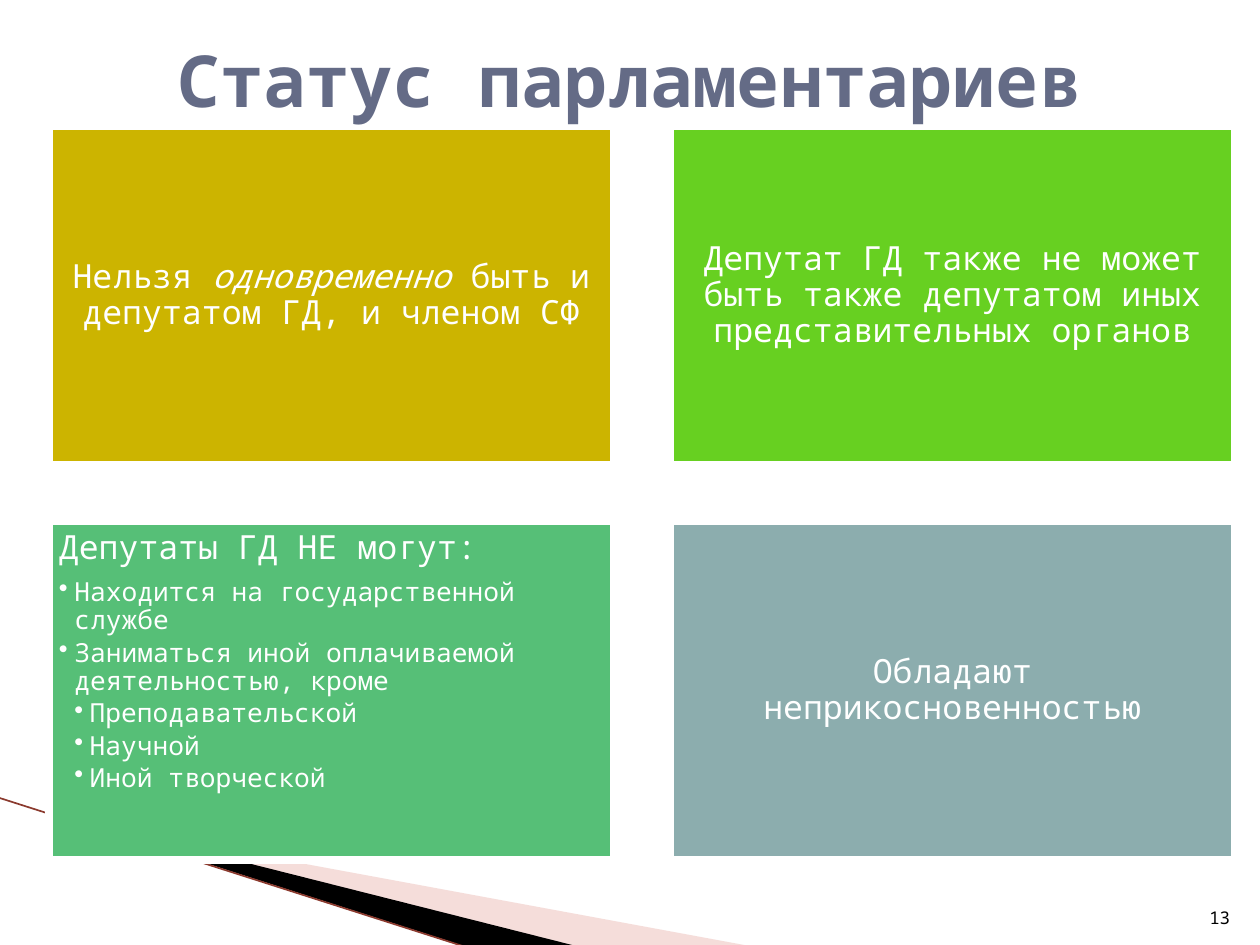
import pptx
import pptx.dml.color
import pptx.enum.shapes
import pptx.enum.text
import pptx.oxml.ns
import pptx.util
from lxml import etree
from pptx.util import Cm

COLORS = {
    "white": "FFFFFF", "black": "000000", "title": "646B86",
    "pink": "E7ACA4", "stripe": "8B3A2E", "gold": "CCB400",
    "lime": "67D021", "green": "56BF77", "gray": "8CADAE",
}
ALIGN = pptx.enum.text.PP_ALIGN
ANCHOR = pptx.enum.text.MSO_ANCHOR


def add_xml(parent, tag, **attributes):
    return etree.SubElement(parent, pptx.oxml.ns.qn(tag), **attributes)


class SlideBuilder:
    font_name = "Noto Sans Mono"
    heading_size = 19
    bullet_size = 15
    line_spacing = 0.9
    card_inset = Cm(0.2)
    bullet_indent = Cm(0.31)

    def __init__(self, slide):
        self.slide = slide

    def rgb(self, name):
        return pptx.dml.color.RGBColor.from_string(COLORS[name])

    def style_font(self, paragraph, size, color="white", bold=False):
        paragraph.font.name = self.font_name
        paragraph.font.size = pptx.util.Pt(size)
        paragraph.font.bold = bold
        paragraph.font.color.rgb = self.rgb(color)

    def polygon(self, points, color, opacity=None):
        """Fill the outline through points (in cm); opacity is in percent."""
        corners = [(Cm(x), Cm(y)) for x, y in points]
        builder = self.slide.shapes.build_freeform(*corners[0], scale=1.0)
        builder.add_line_segments(corners[1:], close=True)
        shape = builder.convert_to_shape()
        shape.shadow.inherit = False
        shape.line.fill.background()
        shape.fill.solid()
        shape.fill.fore_color.rgb = self.rgb(color)
        if opacity is not None:
            tint = shape.fill._xPr.find(".//" + pptx.oxml.ns.qn("a:srgbClr"))
            add_xml(tint, "a:alpha", val=str(opacity * 1000))

    def line(self, start, end, color, width):
        connector = self.slide.shapes.add_connector(
            pptx.enum.shapes.MSO_CONNECTOR.STRAIGHT,
            *(Cm(value) for value in start + end))
        connector.line.color.rgb = self.rgb(color)
        connector.line.width = pptx.util.Pt(width)
        add_xml(connector._element.spPr, "a:effectLst")

    def label(self, box, text, size, color, align, anchor, bold=False):
        frame = self.slide.shapes.add_textbox(*map(Cm, box)).text_frame
        frame.word_wrap = True
        frame.vertical_anchor = anchor
        paragraph = frame.paragraphs[0]
        paragraph.text = text
        paragraph.alignment = align
        self.style_font(paragraph, size, color, bold)

    def card(self, box, color, heading, bullets=()):
        """heading lists (text, italic) runs; bullets lists (level, text)."""
        shape = self.slide.shapes.add_shape(
            pptx.enum.shapes.MSO_SHAPE.RECTANGLE, *map(Cm, box))
        shape.shadow.inherit = False
        shape.fill.solid()
        shape.fill.fore_color.rgb = self.rgb(color)
        shape.line.color.rgb = self.rgb("white")
        shape.line.width = pptx.util.Pt(4.33)
        frame = shape.text_frame
        frame.word_wrap = True
        frame.margin_left = frame.margin_right = self.card_inset
        frame.margin_top = frame.margin_bottom = self.card_inset
        frame.vertical_anchor = ANCHOR.TOP if bullets else ANCHOR.MIDDLE

        paragraph = frame.paragraphs[0]
        for text, italic in heading:
            run = paragraph.add_run()
            run.text = text
            if italic:
                run.font.italic = True
        paragraph.alignment = ALIGN.LEFT if bullets else ALIGN.CENTER
        paragraph.line_spacing = self.line_spacing
        paragraph.space_after = pptx.util.Pt(0.35 * self.heading_size)
        self.style_font(paragraph, self.heading_size)
        for level, text in bullets:
            self.bullet(frame.add_paragraph(), level, text)

    def bullet(self, paragraph, level, text):
        paragraph.text = text
        paragraph.level = level
        paragraph.alignment = ALIGN.LEFT
        paragraph.line_spacing = self.line_spacing
        paragraph.space_after = pptx.util.Pt(0.15 * self.bullet_size)
        properties = paragraph._p.get_or_add_pPr()
        properties.set("marL", str(level * self.bullet_indent))
        properties.set("indent", str(-self.bullet_indent))
        add_xml(properties, "a:buChar", char="•")
        self.style_font(paragraph, self.bullet_size)


def main():
    presentation = pptx.Presentation()
    presentation.slide_width = Cm(25.4)
    presentation.slide_height = Cm(19.05)
    builder = SlideBuilder(
        presentation.slides.add_slide(presentation.slide_layouts[6]))

    builder.polygon([(1.4, 16.54), (15.11, 19.07), (11.58, 19.07), (1.4, 16.51)],
                    "pink", opacity=40)
    builder.polygon([(1.35, 16.48), (11.61, 19.07), (9.45, 19.1), (1.37, 16.51)],
                    "black")
    builder.line((-0.03, 16.08), (9.42, 19.1), "stripe", 0.95)

    restrictions = [
        (1, "Находится на государственной службе"),
        (1, "Заниматься иной оплачиваемой деятельностью, кроме"),
        (2, "Преподавательской"),
        (2, "Научной"),
        (2, "Иной творческой"),
    ]
    cards = [
        ("gold", [("Нельзя ", False), ("одновременно", True),
                  (" быть и депутатом ГД, и членом СФ", False)], ()),
        ("lime", [("Депутат ГД также не может быть также депутатом иных "
                   "представительных органов", False)], ()),
        ("green", [("Депутаты ГД НЕ могут:", False)], restrictions),
        ("gray", [("Обладают неприкосновенностью", False)], ()),
    ]
    left, top, width, height, gap = 0.99, 2.54, 11.38, 6.83, 1.14
    for index, (color, heading, bullets) in enumerate(cards):
        row, column = divmod(index, 2)
        box = (left + column * (width + gap), top + row * (height + gap),
               width, height)
        builder.card(box, color, heading, bullets)

    builder.label((1.27, 0, 22.86, 3.18), "Статус парламентариев", 41, "title",
                  ALIGN.CENTER, ANCHOR.MIDDLE, bold=True)
    builder.label((24.03, 17.81, 1.02, 1.02), "13", 10, "black",
                  ALIGN.RIGHT, ANCHOR.BOTTOM)
    presentation.save("out.pptx")


if __name__ == "__main__":
    main()
